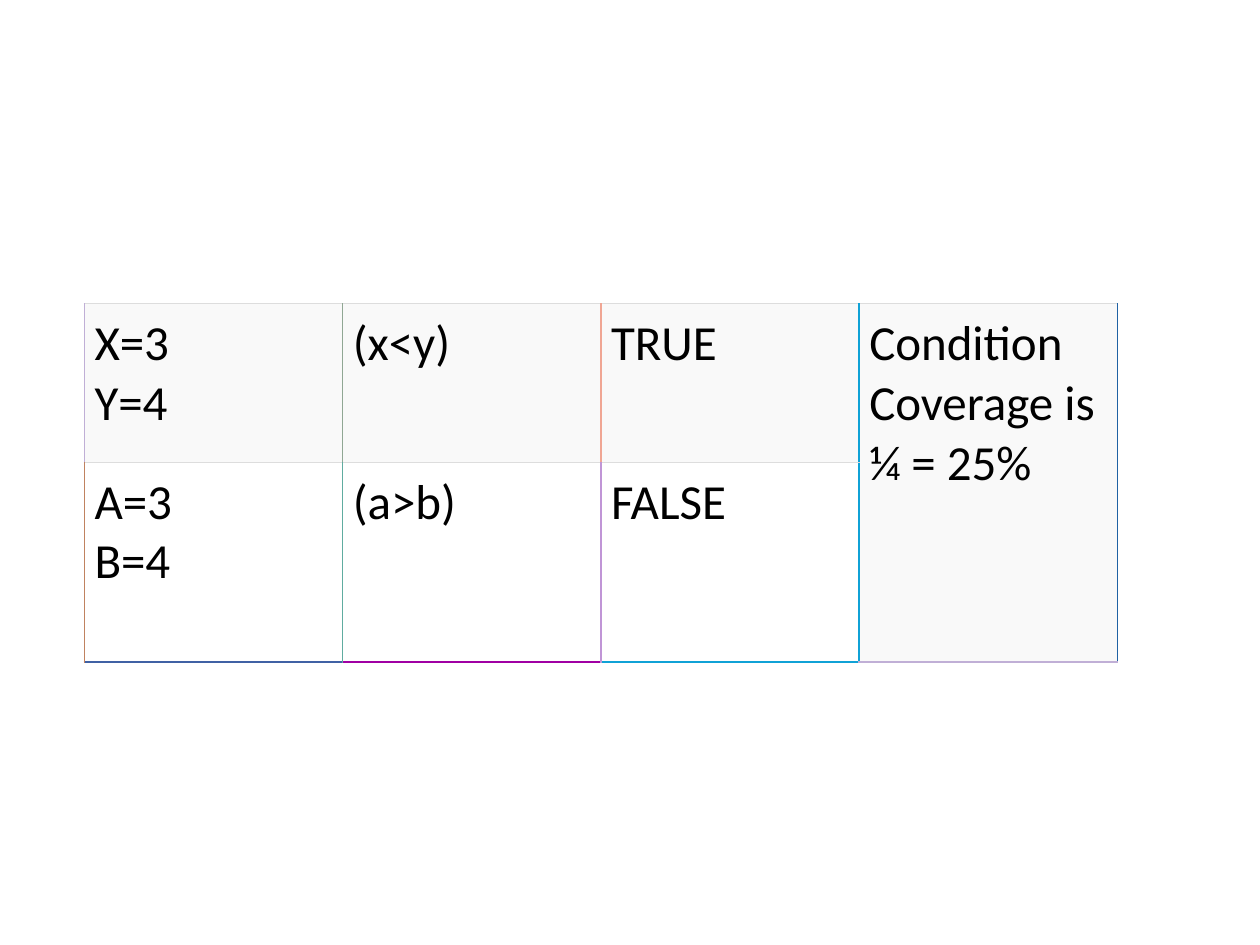
from lxml.etree import SubElement
from pptx import Presentation
from pptx.dml.color import RGBColor
from pptx.oxml.ns import qn
from pptx.util import Inches, Pt

BLACK = RGBColor(0x00, 0x00, 0x00)
WHITE = RGBColor(0xFF, 0xFF, 0xFF)
PALE = RGBColor(0xF9, 0xF9, 0xF9)
GREY = RGBColor(0xDD, 0xDD, 0xDD)
LILAC = RGBColor(0xC0, 0xAF, 0xD6)
SAGE = RGBColor(0x90, 0xA7, 0x94)
SALMON = RGBColor(0xF0, 0xA6, 0x94)
CYAN = RGBColor(0x10, 0xA2, 0xD6)
NAVY = RGBColor(0x20, 0x62, 0xA4)
BROWN = RGBColor(0xC0, 0x82, 0x60)
TEAL = RGBColor(0x60, 0xAC, 0xA0)
SLATE = RGBColor(0x40, 0x61, 0xA4)
VIOLET = RGBColor(0xC0, 0x95, 0xD6)
PURPLE = RGBColor(0xA0, 0x00, 0xA3)
MINT = RGBColor(0x50, 0xEE, 0xD5)

LEFT, TOP = Inches(0.67), Inches(2.41)
COL_W, ROW_H = Inches(2.05), Inches(1.26)
INSET = Inches(0.08)

# Each cell: text, fill, then left, right, top and bottom border colours
CONDITION = ("Condition Coverage is ¼ = 25%", PALE, (CYAN, NAVY, GREY, LILAC))
ROWS = [
    [("X=3\nY=4", PALE, (LILAC, SAGE, GREY, GREY)),
     ("(x<y)", PALE, (SAGE, SALMON, GREY, GREY)),
     ("TRUE", PALE, (SALMON, CYAN, GREY, GREY)),
     CONDITION],
    [("A=3\nB=4", WHITE, (BROWN, TEAL, GREY, SLATE)),
     ("(a>b)", WHITE, (TEAL, VIOLET, GREY, PURPLE)),
     ("FALSE", WHITE, (VIOLET, MINT, GREY, CYAN)),
     CONDITION],
]


def set_borders(cell, colors):
    tcPr = cell._tc.get_or_add_tcPr()
    for side, color in zip("LRTB", colors):
        width = Pt(0.75) if color == GREY else Pt(1)
        ln = SubElement(tcPr, qn(f"a:ln{side}"), w=str(width))
        fill = SubElement(ln, qn("a:solidFill"))
        SubElement(fill, qn("a:srgbClr"), val=str(color))


def set_text(cell, text):
    tf = cell.text_frame
    tf.text = text
    for p in tf.paragraphs:
        for r in p.runs:
            r.font.name = "Calibri"
            r.font.size = Pt(28)
            r.font.color.rgb = BLACK


def style_cell(cell, text, fill, borders):
    cell.margin_left = cell.margin_right = INSET
    cell.margin_top = cell.margin_bottom = INSET
    set_borders(cell, borders)
    cell.fill.solid()
    cell.fill.fore_color.rgb = fill
    if not cell.is_spanned:
        set_text(cell, text)


def add_coverage_table(s):
    n_rows, n_cols = len(ROWS), len(ROWS[0])
    table = s.shapes.add_table(n_rows, n_cols, LEFT, TOP,
                               n_cols * COL_W, n_rows * ROW_H).table
    table.first_row = table.horz_banding = False
    # The result spans both rows of the last column
    table.cell(0, n_cols - 1).merge(table.cell(n_rows - 1, n_cols - 1))
    for i, row in enumerate(ROWS):
        for j, content in enumerate(row):
            style_cell(table.cell(i, j), *content)


def main():
    prs = Presentation()
    prs.slide_width, prs.slide_height = Inches(10), Inches(7.5)
    s = prs.slides.add_slide(prs.slide_layouts[6])
    add_coverage_table(s)
    prs.save("out.pptx")


if __name__ == "__main__":
    main()
